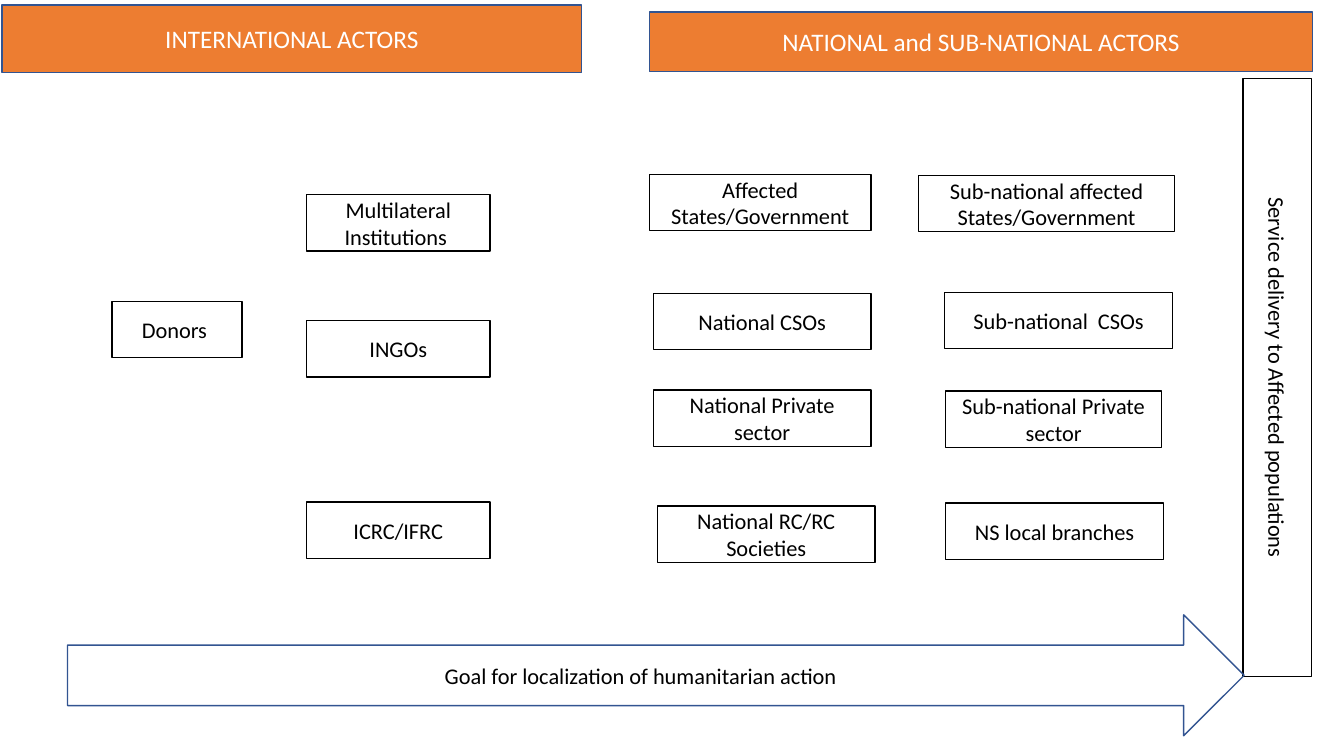
import pptx
import pptx.util
import pptx.dml.color
import pptx.enum.shapes
import pptx.enum.text

RGBColor = pptx.dml.color.RGBColor
SHAPES = pptx.enum.shapes.MSO_SHAPE

BLACK = RGBColor(0x00, 0x00, 0x00)
WHITE = RGBColor(0xFF, 0xFF, 0xFF)
ORANGE = RGBColor(0xED, 0x7D, 0x31)
BLUE = RGBColor(0x32, 0x54, 0x91)

PX = 9144
SLIDE_SIZE = (1333, 750)
ACTOR_HEIGHT = 56

ACTORS = [
    ("Donors ", 111, 299, 129),
    ("Multilateral Institutions ", 304, 193, 182),
    ("INGOs", 304, 318, 182),
    ("ICRC/IFRC", 304, 498, 182),
    ("Affected States/Government", 644, 173, 220),
    ("National CSOs", 648, 291, 216),
    ("National Private sector", 648, 387, 216),
    ("National RC/RC Societies", 652, 502, 216),
    ("Sub-national affected States/Government", 911, 174, 254),
    ("Sub-national  CSOs", 937, 290, 226),
    ("Sub-national Private sector", 938, 388, 214),
    ("NS local branches", 938, 499, 216),
]
HEADINGS = [
    ("INTERNATIONAL ACTORS", (2, 5, 575, 67)),
    ("NATIONAL and SUB-NATIONAL ACTORS", (644, 12, 658, 59)),
]
SERVICE = ("Service delivery to Affected populations", (1233, 78, 68, 593))
GOAL = ("Goal for localization of humanitarian action", (67, 610, 1167, 120))


def add_block(slide, text, box, *, kind=SHAPES.RECTANGLE, fill=None, line=BLACK,
              color=BLACK, size=16, vertical=False):
    block = slide.shapes.add_shape(kind, *(length * PX for length in box))
    block.shadow.inherit = False
    if fill is None:
        block.fill.background()
    else:
        block.fill.solid()
        block.fill.fore_color.rgb = fill
    block.line.color.rgb = line
    block.line.width = pptx.util.Pt(1)
    frame = block.text_frame
    frame.word_wrap = True
    frame.vertical_anchor = pptx.enum.text.MSO_ANCHOR.MIDDLE
    if vertical:
        block.element.txBody.bodyPr.set("vert", "vert")
    paragraph = frame.paragraphs[0]
    paragraph.alignment = pptx.enum.text.PP_ALIGN.CENTER
    run = paragraph.add_run()
    run.text = text
    run.font.name = "Calibri"
    run.font.size = pptx.util.Pt(size)
    run.font.color.rgb = color


def main():
    deck = pptx.Presentation()
    deck.slide_width, deck.slide_height = (length * PX for length in SLIDE_SIZE)
    slide = deck.slides.add_slide(deck.slide_layouts[6])

    for name, left, top, width in ACTORS:
        add_block(slide, name, (left, top, width, ACTOR_HEIGHT))
    add_block(slide, *SERVICE, vertical=True)
    add_block(slide, *GOAL, kind=SHAPES.RIGHT_ARROW, line=BLUE)
    for heading, box in HEADINGS:
        add_block(slide, heading, box, fill=ORANGE, line=BLUE, color=WHITE, size=18)

    deck.save("out.pptx")


if __name__ == "__main__":
    main()
